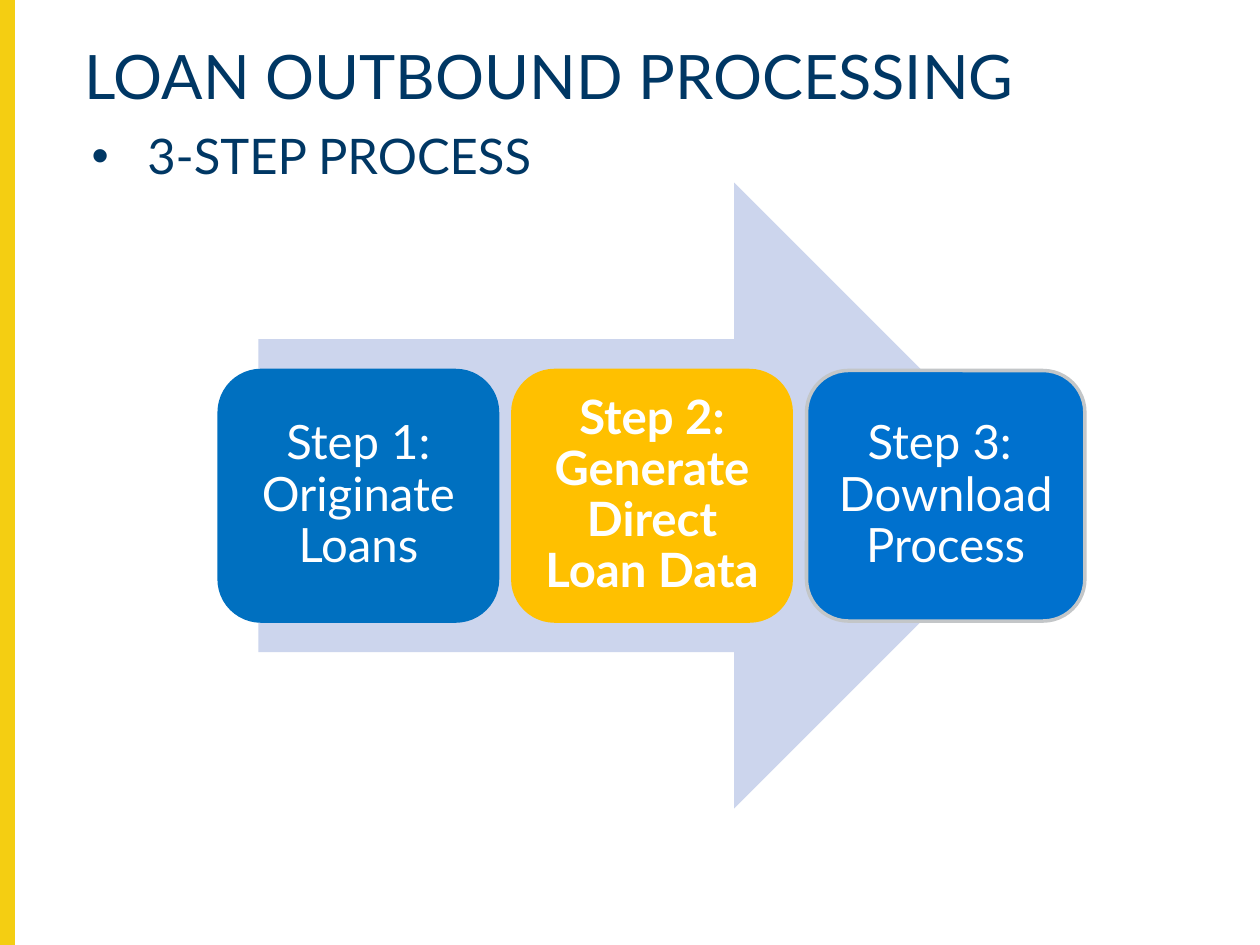
"""Build the loan outbound processing slide with its three-step arrow."""
import pptx
import pptx.dml.color
import pptx.enum.shapes
import pptx.enum.text
import pptx.oxml
import pptx.oxml.ns
import pptx.util
from pptx.util import Cm, Pt

COLORS = {
    "accent": "F4CE12",
    "heading": "003764",
    "arrow": "CCD5ED",
    "originate": "0070C0",
    "generate": "FFC000",
    "download": "0071CE",
    "outline": "C3C6C8",
    "white": "FFFFFF",
}
SHAPES = pptx.enum.shapes.MSO_SHAPE
ALIGN = pptx.enum.text.PP_ALIGN
ANCHOR = pptx.enum.text.MSO_ANCHOR
STEPS = [
    ("Step 1: Originate Loans", "originate", "originate", False),
    ("Step 2: Generate Direct Loan Data", "generate", "generate", True),
    ("Step 3:  Download Process", "download", "outline", False),
]


def rgb(name):
    """Return the named colour."""
    return pptx.dml.color.RGBColor.from_string(COLORS[name])


def apply_format(target, values):
    """Set each attribute of the target from a dict."""
    for attribute, value in values.items():
        setattr(target, attribute, value)


def write_text(frame, wording, color, frame_format, paragraph_format, font_format):
    """Fill a text frame with one formatted paragraph."""
    apply_format(frame, {"word_wrap": True, **frame_format})
    paragraph = frame.paragraphs[0]
    apply_format(paragraph, {"line_spacing": 0.9, **paragraph_format})
    run = paragraph.add_run()
    run.text = wording
    apply_format(run.font, {"name": "Lato", **font_format})
    run.font.color.rgb = rgb(color)
    return paragraph


def add_heading(slide, wording, box, size, paragraph_format):
    """Add a heading text box and return its paragraph."""
    heading = slide.shapes.add_textbox(*map(Cm, box))
    return write_text(heading.text_frame, wording, "heading", {},
                      paragraph_format, {"size": Pt(size)})


def add_bullet(paragraph):
    """Give the paragraph a round bullet with a hanging indent."""
    properties = paragraph._p.get_or_add_pPr()
    properties.set("marL", str(Cm(1.27)))
    properties.set("indent", str(Cm(-1.12)))
    namespace = pptx.oxml.ns.nsdecls("a")
    for xml in (
        f'<a:buClr {namespace}><a:srgbClr val="{COLORS["heading"]}"/></a:buClr>',
        f'<a:buFont {namespace} typeface="Arial"/>',
        f'<a:buChar {namespace} char="•"/>',
    ):
        properties.append(pptx.oxml.parse_xml(xml))


def add_block(slide, kind, box, fill, outline=None, width=1):
    """Add a flat filled shape, outlined when a line colour is given."""
    block = slide.shapes.add_shape(kind, *map(Cm, box))
    block.shadow.inherit = False
    block.fill.solid()
    block.fill.fore_color.rgb = rgb(fill)
    if outline:
        block.line.color.rgb = rgb(outline)
        block.line.width = Pt(width)
    else:
        block.line.fill.background()
    return block


def add_step(slide, index, wording, fill, outline, bold):
    """Add one rounded step at its place along the arrow."""
    box = (4.42 + 5.92 * index, 7.47, 5.61, 5.05)
    step = add_block(slide, SHAPES.ROUNDED_RECTANGLE, box, fill, outline, 2)
    sides = ("left", "top", "right", "bottom")
    frame_format = {f"margin_{side}": Cm(0.28) for side in sides}
    frame_format["vertical_anchor"] = ANCHOR.MIDDLE
    write_text(step.text_frame, wording, "white", frame_format,
               {"alignment": ALIGN.CENTER}, {"size": Pt(27), "bold": bold})


def main():
    """Build and save the slide."""
    deck = pptx.Presentation()
    apply_format(deck, {"slide_width": Cm(25.4), "slide_height": Cm(19.05)})
    slide = deck.slides.add_slide(deck.slide_layouts[6])
    add_block(slide, SHAPES.RECTANGLE, (0, 0, 0.28, 19.05), "accent", "accent")
    add_heading(slide, "LOAN OUTBOUND PROCESSING", (1.45, 0.81, 23.06, 2.18), 35, {})
    process = add_heading(slide, "3-STEP PROCESS", (1.45, 2.54, 23.16, 14.53), 28,
                          {"space_before": Pt(10)})
    add_bullet(process)
    add_block(slide, SHAPES.RIGHT_ARROW, (5.21, 3.68, 15.9, 12.62), "arrow")
    for index, step in enumerate(STEPS):
        add_step(slide, index, *step)
    deck.save("out.pptx")


if __name__ == "__main__":
    main()
